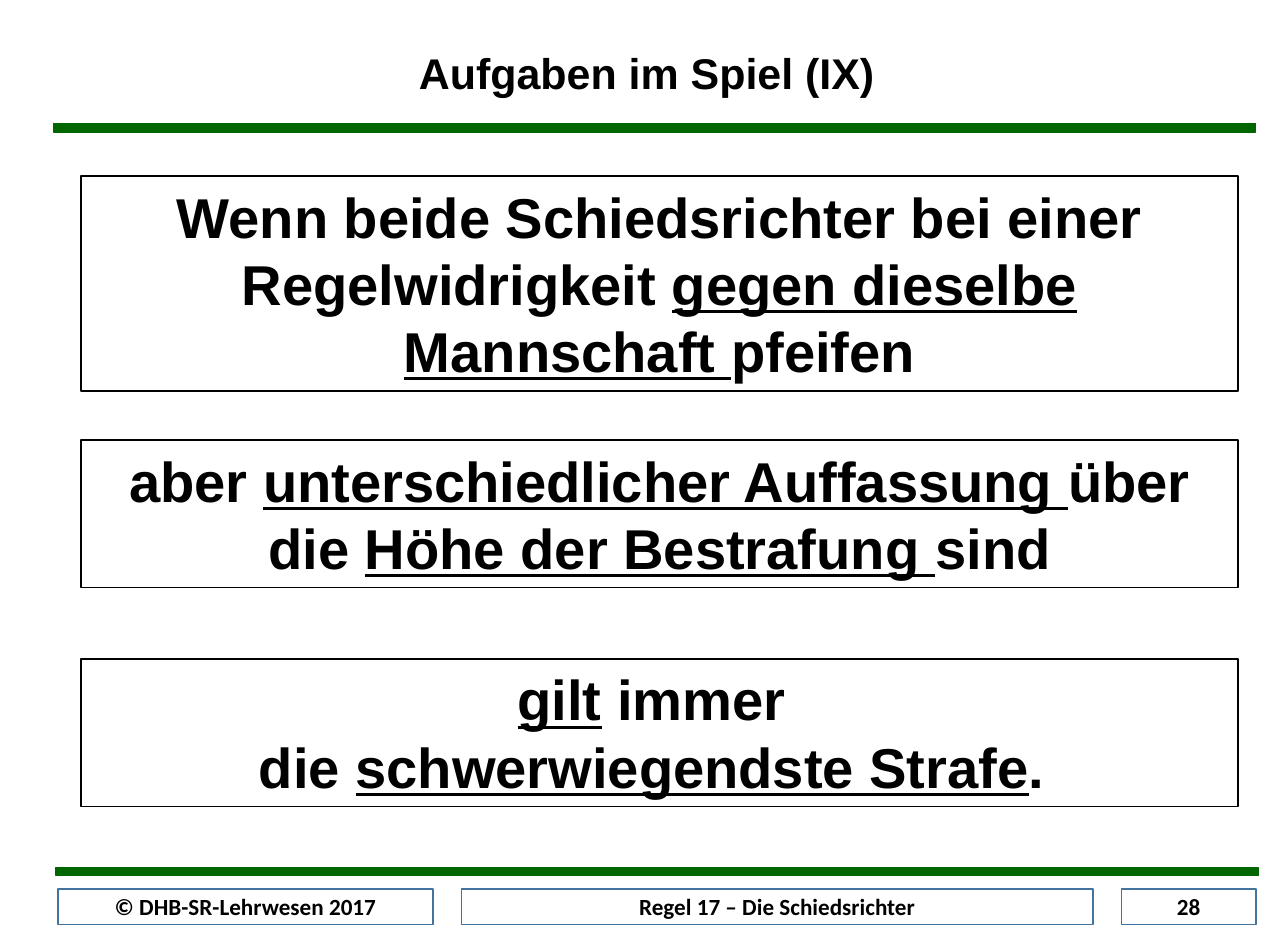
from pptx import Presentation
from pptx.dml.color import RGBColor
from pptx.enum.shapes import MSO_SHAPE
from pptx.enum.text import MSO_ANCHOR, MSO_AUTO_SIZE, PP_ALIGN
from pptx.util import Inches, Pt

COLORS = {"green": "006600", "blue": "43739E", "white": "FFFFFF", "black": "000000"}


class Deck:
    """Draws styled elements placed in percent of the slide's size."""

    def __init__(self, width, height):
        self.prs = Presentation()
        self.prs.slide_width = Inches(width)
        self.prs.slide_height = Inches(height)
        self.s = self.prs.slides.add_slide(self.prs.slide_layouts[5])

    def area(self, x, y, w, h):
        across, down = self.prs.slide_width / 100, self.prs.slide_height / 100
        return [round(v) for v in (x * across, y * down, w * across, h * down)]

    def paint(self, sp, fill, line, weight=1):
        sp.fill.solid()
        sp.fill.fore_color.rgb = RGBColor.from_string(COLORS[fill])
        sp.line.color.rgb = RGBColor.from_string(COLORS[line])
        sp.line.width = Pt(weight)

    def rect(self, area, fill, line, weight=1):
        sp = self.s.shapes.add_shape(MSO_SHAPE.RECTANGLE, *self.area(*area))
        sp.shadow.inherit = False
        self.paint(sp, fill, line, weight)
        return sp

    def set_text(self, sp, lines, font, size, anchor):
        tf = sp.text_frame
        tf.word_wrap = True
        tf.vertical_anchor = anchor
        tf.margin_left = tf.margin_right = Inches(0.11)
        tf.margin_top = tf.margin_bottom = Inches(0.05)
        for i, line in enumerate(lines):
            p = tf.add_paragraph() if i else tf.paragraphs[0]
            p.alignment = PP_ALIGN.CENTER
            p.font.name, p.font.size, p.font.bold = font, Pt(size), True
            p.font.color.rgb = RGBColor.from_string(COLORS["black"])
            for j, part in enumerate(line.split("_")):
                if part:
                    r = p.add_run()
                    r.text = part
                    if j % 2:
                        r.font.underline = True

    def title(self, area, text):
        sp = self.s.shapes.title
        sp.left, sp.top, sp.width, sp.height = self.area(*area)
        self.paint(sp, "white", "white")
        self.set_text(sp, [text], "Arial", 26, MSO_ANCHOR.TOP)
        sp.text_frame.auto_size = MSO_AUTO_SIZE.SHAPE_TO_FIT_TEXT

    def bar(self, x, y):
        self.rect((x, y, 93.35, 0.88), "green", "green", 0.75)

    def footer(self, x, w, text):
        sp = self.rect((x, 94.35, w, 3.79), "white", "blue")
        self.set_text(sp, [text], "Calibri", 14, MSO_ANCHOR.MIDDLE)

    def statement(self, y, h, *lines):
        sp = self.rect((6.28, y, 89.84, h), "white", "black")
        self.set_text(sp, lines, "Arial", 34, MSO_ANCHOR.TOP)
        sp.text_frame.auto_size = MSO_AUTO_SIZE.SHAPE_TO_FIT_TEXT


def main():
    deck = Deck(10.83, 7.92)
    deck.title((25.02, 4.29, 50.42, 6.94), "Aufgaben im Spiel (IX)")
    deck.bar(4.16, 13.13)
    deck.bar(4.34, 92.05)
    deck.footer(4.52, 29.09, "© DHB-SR-Lehrwesen 2017")
    deck.footer(35.83, 49.03, "Regel 17 – Die Schiedsrichter")
    deck.footer(87.07, 10.43, "28")
    deck.statement(18.69, 22.85, "Wenn beide Schiedsrichter bei einer Regelwidrigkeit "
                   "_gegen dieselbe Mannschaft _pfeifen")
    deck.statement(46.72, 15.66, "aber _unterschiedlicher Auffassung _über die "
                   "_Höhe der Bestrafung _sind")
    deck.statement(69.95, 15.66, "_gilt_ immer ", "die _schwerwiegendste Strafe_. ")
    deck.prs.save("out.pptx")


if __name__ == "__main__":
    main()
